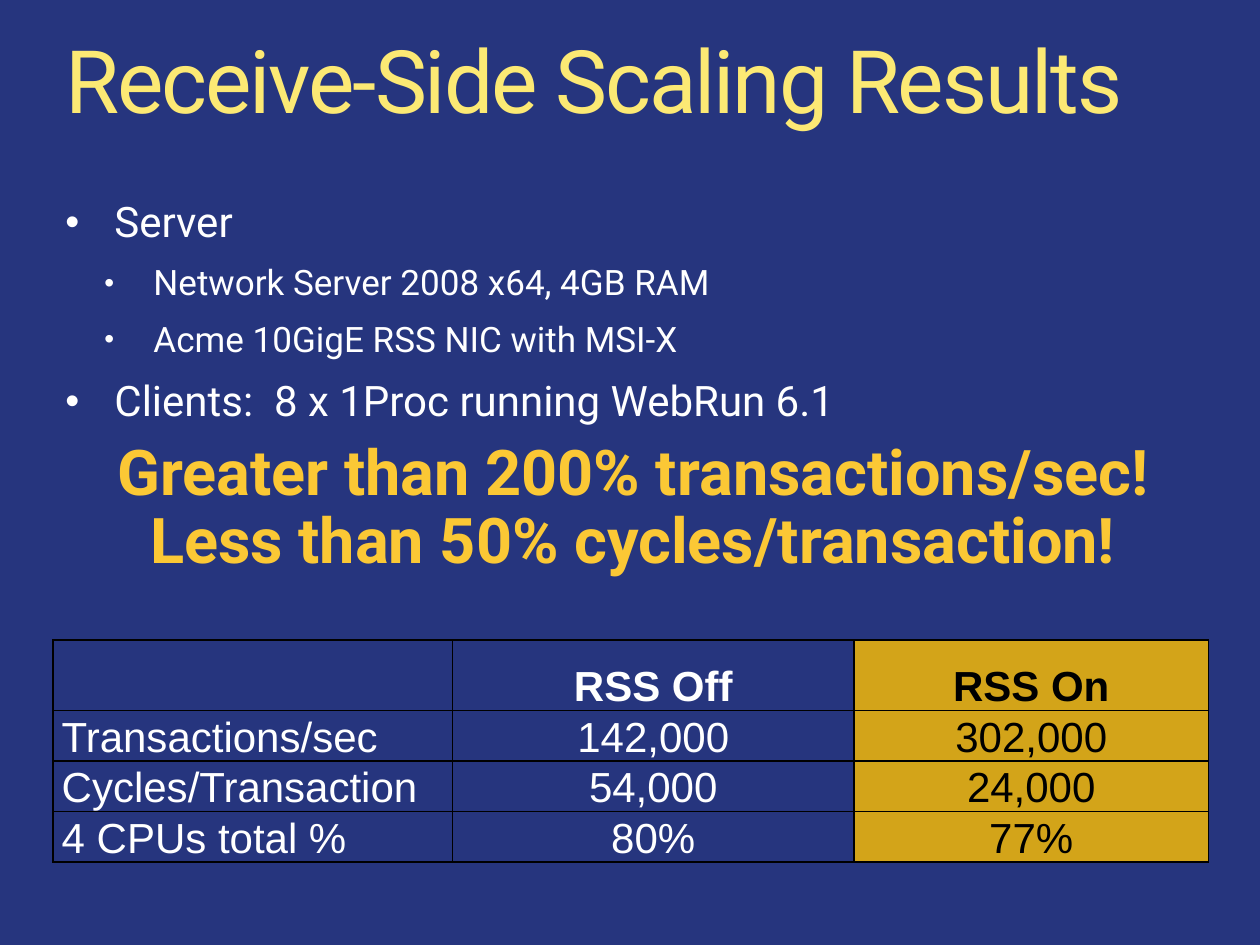
from lxml import etree
from pptx import Presentation
from pptx.dml.color import RGBColor
from pptx.enum.text import MSO_ANCHOR, PP_ALIGN
from pptx.oxml.ns import qn
from pptx.util import Inches, Pt

LEFT, CENTER = PP_ALIGN.LEFT, PP_ALIGN.CENTER
BOTTOM = MSO_ANCHOR.BOTTOM

NAVY = RGBColor(0x26, 0x35, 0x7E)
YELLOW = RGBColor(0xFC, 0xE9, 0x74)
GOLD = RGBColor(0xFB, 0xC8, 0x35)
AMBER = RGBColor(0xFF, 0xC0, 0x00)
WHITE = RGBColor(0xFF, 0xFF, 0xFF)
BLACK = RGBColor(0x00, 0x00, 0x00)

TITLE = "Receive-Side Scaling Results"
SETUP = [
    (0, "Server"),
    (1, "Network Server 2008 x64, 4GB RAM"),
    (1, "Acme 10GigE RSS NIC with MSI-X"),
    (0, "Clients:  8 x 1Proc running WebRun 6.1"),
]
HEADLINES = ["Greater than 200% transactions/sec!", "Less than 50% cycles/transaction!"]
RESULTS = [
    ("", "RSS Off", "RSS On"),
    ("Transactions/sec", "142,000", "302,000"),
    ("Cycles/Transaction", "54,000", "24,000"),
    ("4 CPUs total %", "80%", "77%"),
]
COLUMN_WIDTHS = [3.17, 3.19, 2.81]
ROW_HEIGHTS = [0.56, 0.37, 0.37, 0.37]

# Per outline level: font size, space before, left margin, bullet size in percent
LEVELS = [(24, 11.7, 0.39, 95), (20, 10.8, 0.7, 80)]
HANGING = 0.39
NO_MARGINS = dict.fromkeys(("margin_left", "margin_top", "margin_right", "margin_bottom"), 0)
CELL_FORMAT = {
    "margin_left": Inches(0.07), "margin_right": Inches(0.07),
    "margin_top": 0, "margin_bottom": 0, "vertical_anchor": BOTTOM,
}


def apply_format(target, values):
    for name, value in values.items():
        setattr(target, name, value)


def add_child(parent, tag, **attributes):
    child = etree.SubElement(parent, qn(tag))
    for name, value in attributes.items():
        child.set(name, str(value))
    return child


def style_font(font, size, color, name="Roboto", bold=False):
    apply_format(font, {"size": Pt(size), "name": name, "bold": bold})
    font.color.rgb = color


def add_text(slide, place, lines, frame_format=None):
    """Add a wrapped text box and return its paragraphs."""
    frame = slide.shapes.add_textbox(*map(Inches, place)).text_frame
    apply_format(frame, {"word_wrap": True, **(frame_format or {})})
    frame.text = "\n".join(lines)
    for paragraph in frame.paragraphs:
        paragraph.line_spacing = 0.9
    return frame.paragraphs


def add_bullet(paragraph, margin, percent):
    properties = paragraph._p.get_or_add_pPr()
    properties.set("marL", str(Inches(margin)))
    properties.set("indent", str(-Inches(HANGING)))
    color = add_child(properties, "a:buClr")
    add_child(color, "a:srgbClr", val=WHITE)
    add_child(properties, "a:buSzPct", val=percent * 1000)
    add_child(properties, "a:buFont", typeface="Arial")
    add_child(properties, "a:buChar", char="•")


def add_borders(cell):
    properties = cell._tc.get_or_add_tcPr()
    for side in ("a:lnL", "a:lnR", "a:lnT", "a:lnB"):
        line = add_child(properties, side, w=Pt(1))
        add_child(add_child(line, "a:solidFill"), "a:srgbClr", val=BLACK)


def fill_amber(cell):
    """Fill the cell with amber at 80 % opacity."""
    cell.fill.solid()
    cell.fill.fore_color.rgb = AMBER
    amber = cell._tc.tcPr.find(qn("a:solidFill")).find(qn("a:srgbClr"))
    add_child(amber, "a:alpha", val=80000)


def add_results(slide):
    place = (0.42, 5.08, sum(COLUMN_WIDTHS), sum(ROW_HEIGHTS))
    table = slide.shapes.add_table(
        len(RESULTS), len(COLUMN_WIDTHS), *map(Inches, place)).table
    apply_format(table, {"first_row": False, "horz_banding": False})
    for column, width in zip(table.columns, COLUMN_WIDTHS):
        column.width = Inches(width)
    for row, height in zip(table.rows, ROW_HEIGHTS):
        row.height = Inches(height)
    for r, values in enumerate(RESULTS):
        for c, value in enumerate(values):
            cell = table.cell(r, c)
            highlighted = c == 2
            apply_format(cell, CELL_FORMAT)
            add_borders(cell)
            if highlighted:
                fill_amber(cell)
            else:
                cell.fill.background()
            cell.text = value
            paragraph = cell.text_frame.paragraphs[0]
            paragraph.alignment = CENTER if c else LEFT
            style_font(paragraph.font, 24, BLACK if highlighted else WHITE, "Arial", r == 0)


def main():
    deck = Presentation()
    apply_format(deck, {"slide_width": Inches(10), "slide_height": Inches(7.5)})
    slide = deck.slides.add_slide(deck.slide_layouts[6])
    slide.background.fill.solid()
    slide.background.fill.fore_color.rgb = NAVY

    title = add_text(slide, (0.42, 0.25, 9.16, 0.76), [TITLE])[0].runs[0]
    style_font(title.font, 50, YELLOW)
    title._r.get_or_add_rPr().set("spc", "-120")

    setup = add_text(slide, (0.42, 1.55, 9.16, 1.87), [text for _, text in SETUP])
    for i, (paragraph, (level, _)) in enumerate(zip(setup, SETUP)):
        size, space, margin, percent = LEVELS[level]
        apply_format(paragraph, {"level": level, "space_before": Pt(space if i else 0)})
        add_bullet(paragraph, margin, percent)
        style_font(paragraph.font, size, WHITE)

    add_results(slide)

    for paragraph in add_text(slide, (0.44, 3.5, 9.17, 1.33), HEADLINES, NO_MARGINS):
        paragraph.alignment = CENTER
        style_font(paragraph.font, 36, GOLD, bold=True)

    deck.save("out.pptx")


if __name__ == "__main__":
    main()
